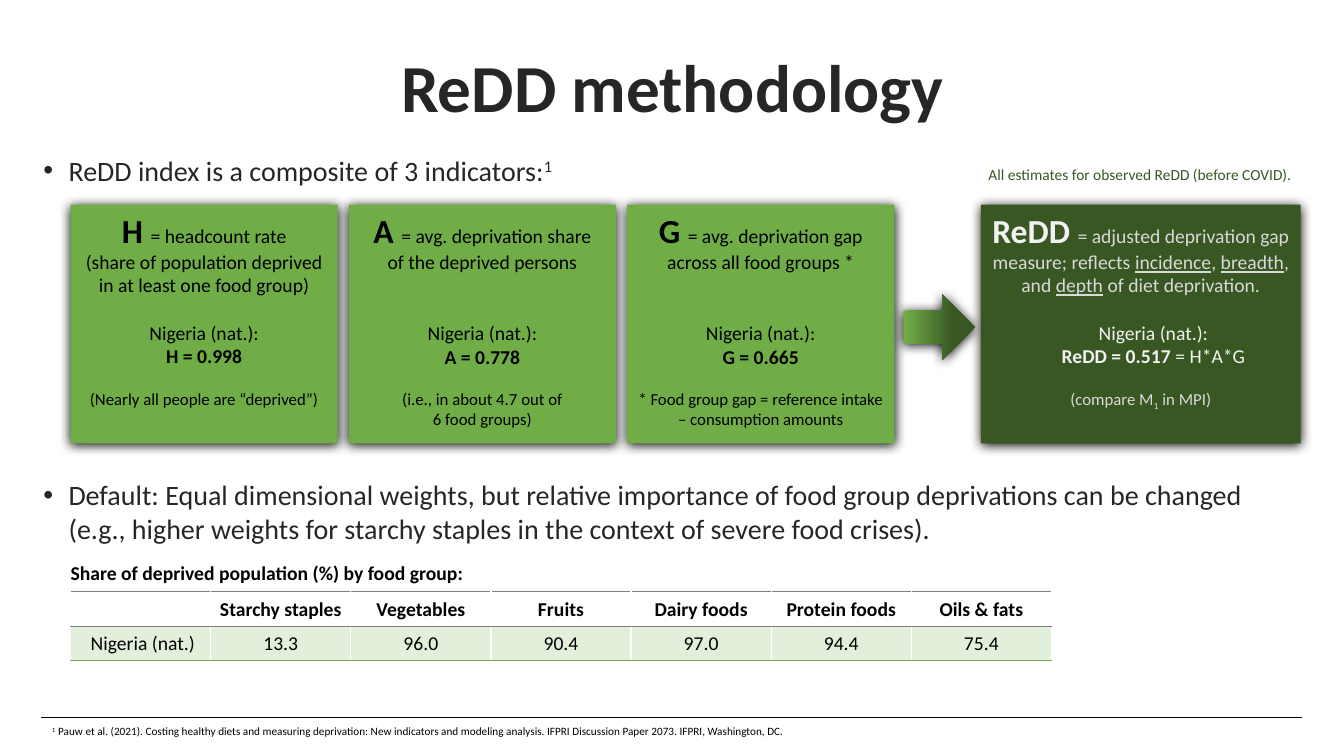
from lxml import etree
from pptx import Presentation
from pptx.dml.color import RGBColor
from pptx.enum.shapes import MSO_CONNECTOR, MSO_SHAPE
from pptx.enum.text import MSO_ANCHOR, PP_ALIGN
from pptx.oxml import parse_xml
from pptx.oxml.ns import nsdecls, qn
from pptx.util import Inches, Pt

# Content
COLORS = {"green": "70AD47", "dark": "385723", "pale": "E2EFDA", "text": "262626",
          "black": "000000", "light": "F2F2F2", "soft": "D9D9D9", "rule": "808080"}
FONT = "Calibri"
TITLE = "ReDD methodology"

# Runs are (text, size, style, color); styles: b bold, u underline, ^ superscript, _ subscript
INTRO = [("ReDD index is a composite of 3 indicators:", 20, "", "text"), ("1", 20, "^", "text")]
DEFAULT = [("Default: Equal dimensional weights, but relative importance of food group "
            "deprivations can be changed (e.g., higher weights for starchy staples in the "
            "context of severe food crises).", 20, "", "text")]
ESTIMATES = [("All estimates for observed ReDD (before COVID).", 11, "", "dark")]
TABLE_TITLE = [("Share of deprived population (%) by food group:", 14, "b", "black")]
FOOTNOTE = [("1", 8, "^", "black"),
            (" Pauw et al. (2021). Costing healthy diets and measuring deprivation: New indicators "
             "and modeling analysis. IFPRI Discussion Paper 2073. IFPRI, Washington, DC.",
             8, "", "black")]

# Indicators are (letter, definition, lines skipped below it, value, remark)
INDICATORS = [
    ("H", "= headcount rate\n(share of population deprived in at least one food group)", 1,
     "H = 0.998", "(Nearly all people are “deprived”)"),
    ("A", "= avg. deprivation share\nof the deprived persons", 2,
     "A = 0.778", "(i.e., in about 4.7 out of\n6 food groups)"),
    ("G", "= avg. deprivation gap across all food groups *", 2,
     "G = 0.665", "* Food group gap = reference intake – consumption amounts"),
]
REDD = [
    [("ReDD ", 24, "b", "light"),
     ("= adjusted deprivation gap measure; reflects ", 14, "", "soft"),
     ("incidence", 14, "u", "soft"), (", ", 14, "", "soft"),
     ("breadth", 14, "u", "soft"), (", and ", 14, "", "soft"),
     ("depth", 14, "u", "soft"), (" of diet deprivation.", 14, "", "soft")],
    [("Nigeria (nat.):", 14, "", "light")],
    [("ReDD = 0.517 ", 14, "b", "light"), ("= H*A*G", 14, "", "light")],
    [("(compare M", 12, "", "soft"), ("1", 12, "_", "soft"), (" in MPI)", 12, "", "soft")],
]
TABLE = [
    ["", "Starchy staples", "Vegetables", "Fruits", "Dairy foods", "Protein foods", "Oils & fats"],
    ["Nigeria (nat.)", "13.3", "96.0", "90.4", "97.0", "94.4", "75.4"],
]

# Geometry in inches
LEFT, CARD_TOP, CARD_WIDTH, CARD_HEIGHT, CARD_STEP = 0.7, 2.03, 2.65, 2.37, 2.76
COLUMN_WIDTH, ROW_HEIGHT = 1.39, 0.34
LINE_FACTOR = 1.22  # line height relative to font size
BASELINES = {"^": "30000", "_": "-25000"}


def rgb(name):
    return RGBColor.from_string(COLORS[name])


def add_runs(paragraph, runs):
    for text, size, style, color in runs:
        for index, line in enumerate(text.split("\n")):
            if index:
                paragraph.add_line_break()
            run = paragraph.add_run()
            run.text = line
            run.font.name, run.font.size = FONT, Pt(size)
            run.font.bold, run.font.underline = style == "b", style == "u"
            run.font.color.rgb = rgb(color)
            if style in BASELINES:
                run.font._element.set("baseline", BASELINES[style])


def add_text(slide, box, runs, margins=(0, 0), align=PP_ALIGN.LEFT, bullet=False):
    frame = slide.shapes.add_textbox(*map(Inches, box)).text_frame
    frame.word_wrap = True
    frame.margin_left = frame.margin_right = Inches(margins[0])
    frame.margin_top = frame.margin_bottom = Inches(margins[1])
    paragraph = frame.paragraphs[0]
    paragraph.alignment = align
    if bullet:
        properties = paragraph._p.get_or_add_pPr()
        properties.set("marL", str(Inches(0.25)))
        properties.set("indent", str(-Inches(0.25)))
        etree.SubElement(properties, qn("a:buFont")).set("typeface", "Arial")
        etree.SubElement(properties, qn("a:buChar")).set("char", "•")
    add_runs(paragraph, runs)


def add_shadowed(slide, kind, box):
    shape = slide.shapes.add_shape(kind, *map(Inches, box))
    shape.line.fill.background()
    shape.fill.solid()
    shape._element.spPr.append(parse_xml(
        f'<a:effectLst {nsdecls("a")}><a:outerShdw blurRad="{Pt(8.5)}" dist="{Pt(1)}" '
        f'dir="5400000" algn="t" rotWithShape="0"><a:srgbClr val="{COLORS["black"]}"/>'
        '</a:outerShdw></a:effectLst>'))
    return shape


def add_card(slide, left, width, fill, paragraphs, skipped, indent=0):
    card = add_shadowed(slide, MSO_SHAPE.RECTANGLE, (left, CARD_TOP, width, CARD_HEIGHT))
    card.fill.fore_color.rgb = rgb(fill)
    frame = card.text_frame
    frame.word_wrap = True
    frame.vertical_anchor = MSO_ANCHOR.TOP
    gaps = [0, 14 * LINE_FACTOR * skipped, 0, 12 * LINE_FACTOR]
    for index, (runs, gap) in enumerate(zip(paragraphs, gaps)):
        paragraph = frame.add_paragraph() if index else frame.paragraphs[0]
        paragraph.alignment = PP_ALIGN.CENTER
        paragraph.space_before = Pt(gap)
        if indent and index in (1, 2):
            paragraph._p.get_or_add_pPr().set("marL", str(Inches(indent)))
        add_runs(paragraph, runs)


def set_border(cell, side, color, width):
    cell._tc.get_or_add_tcPr().append(parse_xml(
        f'<a:{side} {nsdecls("a")} w="{Pt(width)}"><a:solidFill>'
        f'<a:srgbClr val="{COLORS[color]}"/></a:solidFill></a:{side}>'))


def add_food_table(slide):
    rows, columns = len(TABLE), len(TABLE[0])
    table = slide.shapes.add_table(rows, columns, Inches(LEFT), Inches(5.87),
                                   Inches(COLUMN_WIDTH * columns),
                                   Inches(ROW_HEIGHT * rows)).table
    table.first_row = table.horz_banding = False
    for column in table.columns:
        column.width = Inches(COLUMN_WIDTH)
    for row_index, values in enumerate(TABLE):
        header = row_index == 0
        table.rows[row_index].height = Inches(ROW_HEIGHT)
        for column_index, value in enumerate(values):
            label = column_index == 0
            cell = table.cell(row_index, column_index)
            cell.margin_left = Inches(0.2 if label else 0.01)
            cell.margin_right = cell.margin_top = Inches(0.01)
            cell.margin_bottom = 0
            cell.vertical_anchor = MSO_ANCHOR.MIDDLE
            set_border(cell, "lnT", "rule", 0.5)
            set_border(cell, "lnB", "rule" if header else "green", 0.5 if header else 1)
            if header:
                cell.fill.background()
            else:
                cell.fill.solid()
                cell.fill.fore_color.rgb = rgb("pale")
            paragraph = cell.text_frame.paragraphs[0]
            paragraph.alignment = PP_ALIGN.LEFT if label else PP_ALIGN.CENTER
            if value:
                add_runs(paragraph, [(value, 14, "b" if header else "", "black")])


def main():
    presentation = Presentation()
    presentation.slide_width, presentation.slide_height = Inches(13.33), Inches(7.5)
    slide = presentation.slides.add_slide(presentation.slide_layouts[5])

    # Title
    title = slide.shapes.title
    title.left, title.top, title.width, title.height = map(Inches, (0.42, 0.4, 12.5, 1))
    frame = title.text_frame
    frame.margin_left = frame.margin_right = frame.margin_top = frame.margin_bottom = 0
    frame.vertical_anchor = MSO_ANCHOR.MIDDLE
    paragraph = frame.paragraphs[0]
    paragraph.alignment, paragraph.line_spacing = PP_ALIGN.CENTER, 0.9
    add_runs(paragraph, [(TITLE, 48, "b", "text")])

    # Statements
    add_text(slide, (0.43, 1.52, 8.5, 0.5), INTRO, bullet=True)
    add_text(slide, (9.3, 1.64, 3.51, 0.25), ESTIMATES, align=PP_ALIGN.RIGHT)
    add_text(slide, (0.43, 4.74, 12.47, 0.85), DEFAULT, bullet=True)

    # Indicator cards, arrow and resulting index
    for index, (letter, definition, skipped, value, remark) in enumerate(INDICATORS):
        paragraphs = [[(letter + " ", 24, "b", "black"), (definition, 14, "", "black")],
                      [("Nigeria (nat.):", 14, "", "black")],
                      [(value, 14, "b", "black")],
                      [(remark, 12, "", "black")]]
        add_card(slide, LEFT + index * CARD_STEP, CARD_WIDTH, "green", paragraphs, skipped)
    add_card(slide, 9.73, 3.17, "dark", REDD, 1, indent=0.25)
    arrow = add_shadowed(slide, MSO_SHAPE.RIGHT_ARROW, (8.96, 2.92, 0.71, 0.65))
    arrow.fill.gradient()
    arrow.fill.gradient_angle = 0
    for stop, color, position in zip(arrow.fill.gradient_stops, ("green", "dark"), (0.02, 0.7)):
        stop.color.rgb, stop.position = rgb(color), position

    # Food group table
    add_text(slide, (LEFT, 5.52, 4.41, 0.34), TABLE_TITLE, margins=(0, 0.05))
    add_food_table(slide)

    # Footnote
    rule = slide.shapes.add_connector(MSO_CONNECTOR.STRAIGHT, Inches(0.41), Inches(7.12),
                                      Inches(12.91), Inches(7.12))
    rule.line.color.rgb, rule.line.width = rgb("black"), Pt(0.5)
    etree.SubElement(rule._element.spPr, qn("a:effectLst"))
    add_text(slide, (0.42, 7.14, 12.5, 0.3), FOOTNOTE, margins=(0.1, 0.05))

    presentation.save("out.pptx")


if __name__ == "__main__":
    main()
